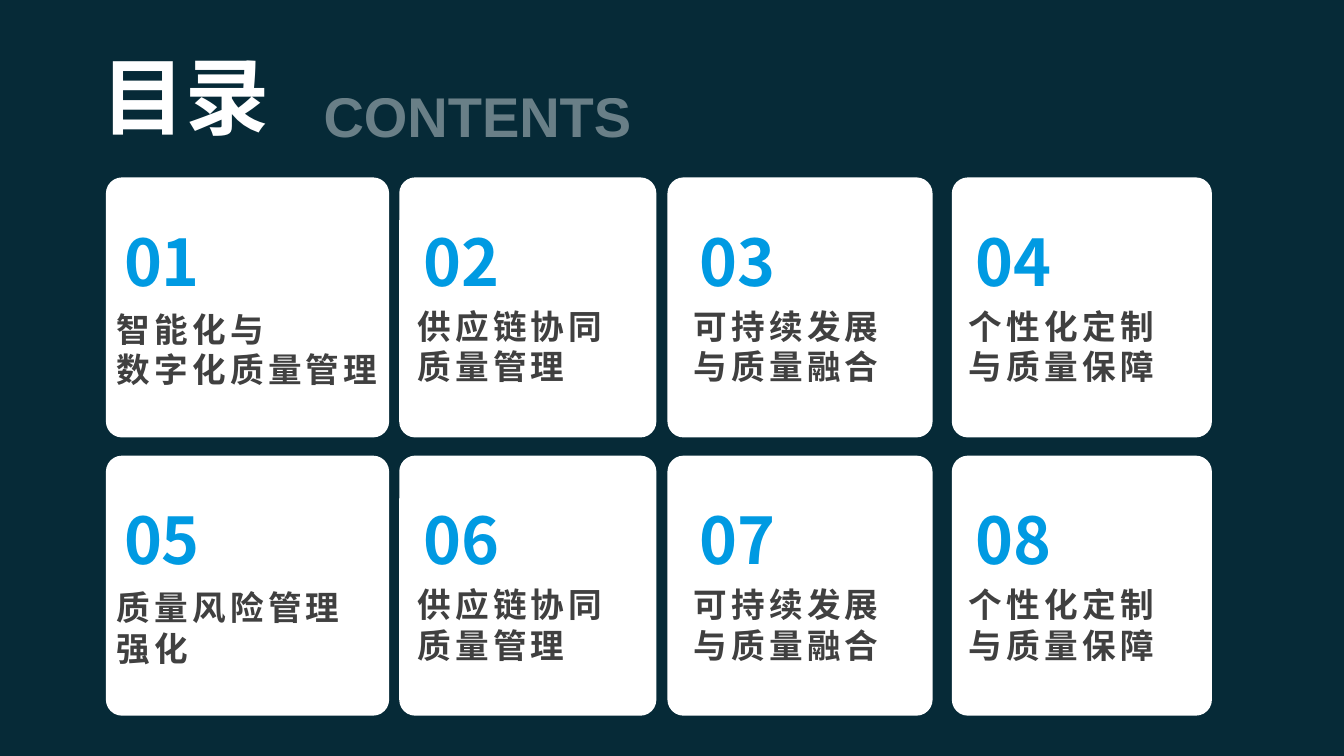
from pptx import Presentation
from pptx.dml.color import RGBColor
from pptx.enum.shapes import MSO_SHAPE
from pptx.enum.text import MSO_ANCHOR, PP_ALIGN
from pptx.oxml.ns import qn
from pptx.util import Inches, Pt
from lxml.etree import SubElement

COLORS = {"back": "062A37", "white": "FFFFFF", "blue": "009AE2", "gray": "404040"}
SANS = "Noto Sans CJK SC"


class Deck:
    def __init__(self):
        self.prs = Presentation()
        self.prs.slide_width = Inches(13.33)
        self.prs.slide_height = Inches(7.5)
        self.slide = self.prs.slides.add_slide(self.prs.slide_layouts[6])
        self.paint(self.slide.background.fill, "back")

    def paint(self, fill, color):
        fill.solid()
        fill.fore_color.rgb = RGBColor.from_string(COLORS[color])

    def card(self, x, y, w, h):
        shape = self.slide.shapes.add_shape(
            MSO_SHAPE.ROUNDED_RECTANGLE, Inches(x), Inches(y), Inches(w), Inches(h))
        shape.adjustments[0] = 0.062
        shape.shadow.inherit = False
        self.paint(shape.fill, "white")
        shape.line.fill.background()

    def text(self, x, y, w, h, text, size, color, face=SANS, wrap=True,
             anchor=MSO_ANCHOR.TOP, align=PP_ALIGN.LEFT,
             line=None, space=None, alpha=None):
        box = self.slide.shapes.add_textbox(Inches(x), Inches(y), Inches(w), Inches(h))
        frame = box.text_frame
        frame.margin_left = frame.margin_right = 0
        frame.margin_top = frame.margin_bottom = 0
        frame.word_wrap = wrap
        frame.vertical_anchor = anchor
        frame.text = text
        for para in frame.paragraphs:
            para.alignment = align
            if line:
                para.line_spacing = Pt(line)
            font = para.font
            font.size = Pt(size)
            font.bold = True
            self.paint(font.fill, color)
            font.name = face
            # East Asian face, letter spacing and transparency
            props = para._p.pPr.find(qn("a:defRPr"))
            SubElement(props, qn("a:ea")).set("typeface", face)
            if space:
                props.set("spc", str(space * 100))
            if alpha:
                tint = props.find(qn("a:solidFill"))[0]
                SubElement(tint, qn("a:alpha")).set("val", str(alpha * 1000))


def main():
    deck = Deck()

    # Heading
    deck.text(3.21, 0.81, 3.3, 0.62, "CONTENTS", 40, "white", "Arial",
              wrap=False, alpha=40)
    deck.text(0.84, 0.26, 2, 1.18, "目录", 60, "white", "Arial",
              anchor=MSO_ANCHOR.BOTTOM, align=PP_ALIGN.CENTER)

    # Columns: card left and width, number left, label left, width and drop
    cols = [
        (1.05, 2.81, 1.23, 1.16, 2.77, 0.03),
        (3.96, 2.55, 4.2, 4.14, 2.21, 0),
        (6.62, 2.63, 6.94, 6.88, 2.21, 0),
        (9.44, 2.58, 9.68, 9.61, 2.21, 0),
    ]
    rows = [
        ["智能化与\n数字化质量管理", "供应链协同质量管理",
         "可持续发展与质量融合", "个性化定制与质量保障"],
        ["质量风险管理\n强化", "供应链协同质量管理",
         "可持续发展与质量融合", "个性化定制与质量保障"],
    ]

    # Topic cards
    for r, labels in enumerate(rows):
        top = 1.76 + r * 2.76
        for c, label in enumerate(labels):
            left, width, num_x, tag_x, tag_w, drop = cols[c]
            deck.card(left, top, width, 2.58)
            deck.text(num_x, top + 0.39, 1.51, 0.82, f"{r * len(cols) + c + 1:02}",
                      46, "blue", wrap=False, anchor=MSO_ANCHOR.BOTTOM)
            deck.text(tag_x, top + 1.27 + drop, tag_w, 0.96, label,
                      24, "gray", line=29, space=3)

    deck.prs.save("out.pptx")


if __name__ == "__main__":
    main()
